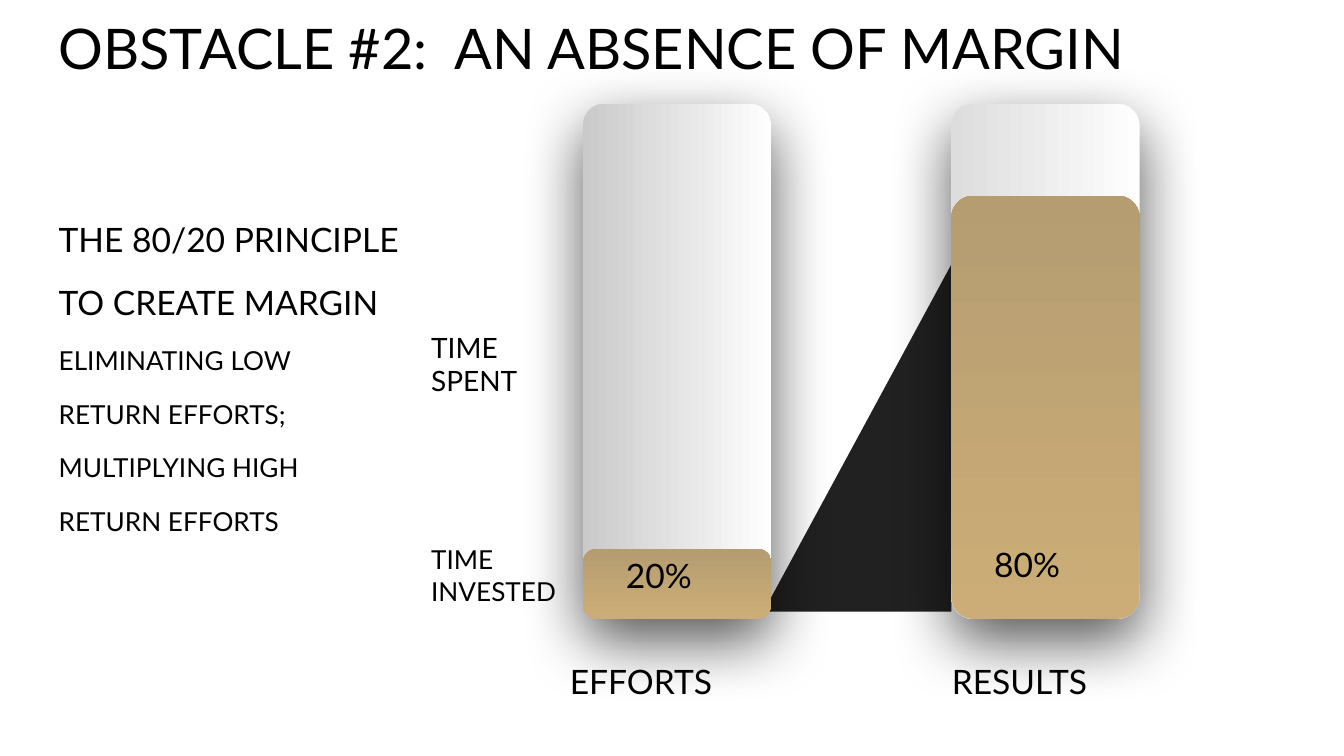
from dataclasses import dataclass

from lxml.etree import SubElement
from pptx import Presentation
from pptx.dml.color import RGBColor
from pptx.enum.shapes import MSO_SHAPE
from pptx.enum.text import MSO_ANCHOR
from pptx.oxml.ns import qn
from pptx.util import Cm, Pt


@dataclass(frozen=True)
class Theme:
    font: str = "Lato"
    ink: str = "000000"
    wedge: str = "212121"
    white: str = "FEFEFE"
    silver: str = "CACACA"
    pale: str = "DDDDDD"
    gold: str = "CCAD77"
    dark_gold: str = "B59D71"
    title: float = 30
    main: float = 18
    label: float = 15
    small: float = 14


@dataclass(frozen=True)
class Line:
    text: str
    size: float
    before: float = 0
    after: float = 0


@dataclass(frozen=True)
class Label:
    x: float
    y: float
    w: float
    h: float
    lines: tuple[Line, ...]
    tab: float = 0


@dataclass(frozen=True)
class Bar:
    x: float
    shade: str
    level: float
    level_radius: float


T = Theme()
BAR_TOP, BAR_BOTTOM, BAR_W = 1.96, 11.7, 3.56
RADIUS = 0.118
EFFORTS = Bar(11.02, T.silver, 1.32, 0.19)
RESULTS = Bar(17.98, T.pale, 8, RADIUS)

LABELS = (
    Label(0.86, 0, 23.67, 1.6, (Line("OBSTACLE #2:  AN ABSENCE OF MARGIN", T.title),)),
    Label(0.86, 3.89, 8.46, 8.76, (
        Line("THE 80/20 PRINCIPLE", T.main),
        Line("TO CREATE MARGIN", T.main, 12),
        Line("ELIMINATING LOW", T.small, 12),
        Line("RETURN EFFORTS;", T.small, 12),
        Line("MULTIPLYING HIGH", T.small, 12),
        Line("RETURN EFFORTS", T.small, 12, 12),
    )),
    Label(7.9, 5.99, 4.42, 1.8, (Line("TIME", T.label), Line("SPENT", T.label))),
    Label(18.54, 10.03, 2.16, 1.27, (Line("80%", T.main),)),
    Label(11.58, 10.24, 2.34, 1.27, (Line("20%", T.main),)),
    Label(10.52, 12.24, 12.83, 1.27, (Line("EFFORTS\tRESULTS", T.main),), tab=7.22),
    Label(7.9, 10.03, 3.96, 1.7, (Line("TIME INVESTED", T.small),)),
)


def set_all(obj, values: dict) -> None:
    for name, value in values.items():
        setattr(obj, name, value)


def add_label(s, label: Label) -> None:
    box = s.shapes.add_textbox(Cm(label.x), Cm(label.y), Cm(label.w), Cm(label.h))
    tf = box.text_frame
    margins = dict.fromkeys(
        ("margin_left", "margin_top", "margin_right", "margin_bottom"), Cm(0.25))
    set_all(tf, {"word_wrap": True, "vertical_anchor": MSO_ANCHOR.TOP, **margins})
    for i, line in enumerate(label.lines):
        p = tf.add_paragraph() if i else tf.paragraphs[0]
        set_all(p, {"space_before": Pt(line.before), "space_after": Pt(line.after)})
        if label.tab:
            tabs = SubElement(p._p.get_or_add_pPr(), qn("a:tabLst"))
            SubElement(tabs, qn("a:tab"), pos=str(Cm(label.tab)), algn="l")
        r = p.add_run()
        r.text = line.text
        set_all(r.font, {"name": T.font, "size": Pt(line.size)})
        r.font.color.rgb = RGBColor.from_string(T.ink)


def add_column(s, x: float, top: float, radius: float,
               colors: tuple[str, str], angle: float):
    sp = s.shapes.add_shape(MSO_SHAPE.ROUNDED_RECTANGLE,
                            Cm(x), Cm(top), Cm(BAR_W), Cm(BAR_BOTTOM - top))
    sp.adjustments[0] = radius
    sp.shadow.inherit = False
    sp.line.fill.background()
    sp.fill.gradient()
    sp.fill.gradient_angle = angle
    for stop, position, color in zip(sp.fill.gradient_stops, (0, 1), colors):
        stop.position = position
        stop.color.rgb = RGBColor.from_string(color)
    return sp


def add_shadow(sp) -> None:
    effects = sp._element.spPr.find(qn("a:effectLst"))
    shadow = SubElement(effects, qn("a:outerShdw"), blurRad=str(Pt(34)), dist=str(Pt(12)),
                        dir="5400000", algn="ctr", rotWithShape="0")
    color = SubElement(shadow, qn("a:srgbClr"), val=T.ink)
    SubElement(color, qn("a:alpha"), val="66000")


def add_wedge(s) -> None:
    left, right, top, bottom = 14.43, RESULTS.x, 5, 11.56
    builder = s.shapes.build_freeform(Cm(right), Cm(top))
    builder.add_line_segments([(Cm(right), Cm(bottom)), (Cm(left), Cm(bottom))], close=True)
    sp = builder.convert_to_shape()
    sp.shadow.inherit = False
    sp.line.fill.background()
    sp.fill.solid()
    sp.fill.fore_color.rgb = RGBColor.from_string(T.wedge)


def main() -> None:
    prs = Presentation()
    set_all(prs, {"slide_width": Cm(25.4), "slide_height": Cm(14.29)})
    s = prs.slides.add_slide(prs.slide_layouts[6])

    # Wedge between the bars
    add_wedge(s)

    # Full bars, then their filled levels
    for bar in (RESULTS, EFFORTS):
        add_shadow(add_column(s, bar.x, BAR_TOP, RADIUS, (T.white, bar.shade), 180))
    for bar in (EFFORTS, RESULTS):
        add_column(s, bar.x, BAR_BOTTOM - bar.level, bar.level_radius,
                   (T.gold, T.dark_gold), 90)

    # Title, body and bar labels
    for label in LABELS:
        add_label(s, label)

    prs.save("out.pptx")


if __name__ == "__main__":
    main()
